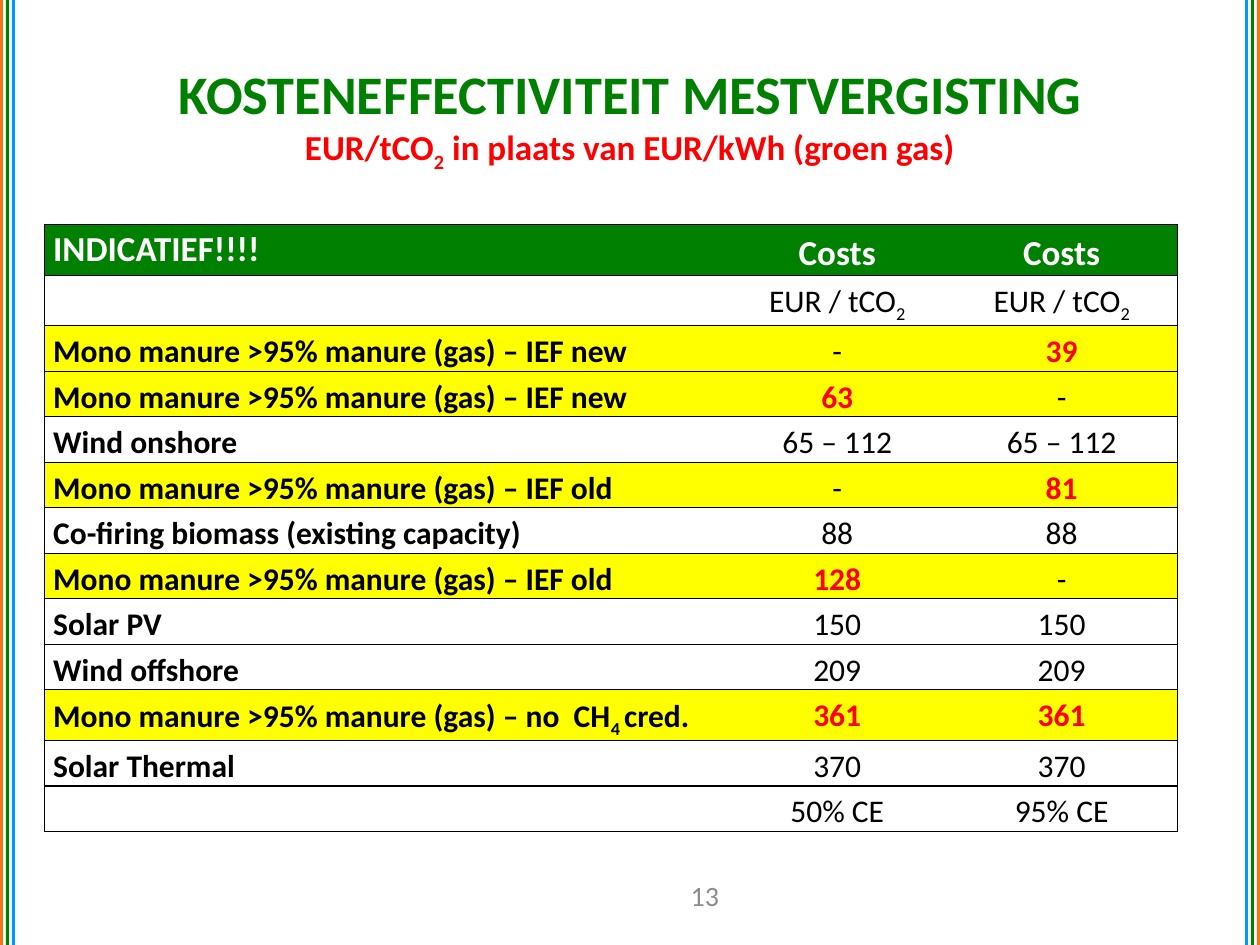
from pptx import Presentation
from pptx.dml.color import RGBColor
from pptx.enum.shapes import MSO_SHAPE
from pptx.enum.text import MSO_ANCHOR, MSO_AUTO_SIZE, PP_ALIGN
from pptx.oxml import parse_xml
from pptx.oxml.ns import nsdecls
from pptx.util import Pt

RECTANGLE = MSO_SHAPE.RECTANGLE
MIDDLE = MSO_ANCHOR.MIDDLE
CENTER, JUSTIFY = PP_ALIGN.CENTER, PP_ALIGN.JUSTIFY
LEFT = PP_ALIGN.LEFT
NO_AUTOFIT = MSO_AUTO_SIZE.NONE

ORANGE = RGBColor(0xF6, 0x76, 0x16)
GREEN = RGBColor(0x00, 0x80, 0x00)
BLUE = RGBColor(0x00, 0x99, 0xFF)
RED = RGBColor(0xFF, 0x00, 0x00)
YELLOW = RGBColor(0xFF, 0xFF, 0x00)
BLACK = RGBColor(0x00, 0x00, 0x00)
WHITE = RGBColor(0xFF, 0xFF, 0xFF)
GREY = RGBColor(0x8C, 0x8C, 0x8C)

WIDTH, HEIGHT = 720, 540
STRIPE_WIDTH = 1.7
PLAIN_TABLE_STYLE = "{2D5ABB26-0587-4C30-8999-92F81FD0307C}"
COLUMN_WIDTHS = (391, 124.5, 132)
ROW_HEIGHT, TALL_ROW_HEIGHT = 26, 29

# Text between underscores is subscript.
MANURE = "Mono manure >95% manure (gas) – "
COSTS = [
    ("INDICATIEF!!!!", "Costs", "Costs"),
    ("", "EUR / tCO_2_", "EUR / tCO_2_"),
    (MANURE + "IEF new", "-", "39"),
    (MANURE + "IEF new", "63", "-"),
    ("Wind onshore", "65 – 112", "65 – 112"),
    (MANURE + "IEF old", "-", "81"),
    ("Co-firing biomass (existing capacity)", "88", "88"),
    (MANURE + "IEF old", "128", "-"),
    ("Solar PV", "150", "150"),
    ("Wind offshore", "209", "209"),
    (MANURE + "no  CH_4 _cred.", "361", "361"),
    ("Solar Thermal", "370", "370"),
    ("", "50% CE", "95% CE"),
]


class SlideBuilder:
    font_name = "Calibri"

    def __init__(self, slide):
        self.slide = slide

    def runs(self, paragraph, text, size, color, bold=False):
        """Add text run by run, lowering the parts between underscores."""
        for index, part in enumerate(text.split("_")):
            if not part:
                continue
            run = paragraph.add_run()
            run.text = part
            run.font.name = self.font_name
            run.font.size = Pt(size)
            run.font.bold = bold
            run.font.color.rgb = color
            if index % 2:
                run._r.get_or_add_rPr().set("baseline", "-25000")

    def stripe(self, left, color):
        bar = self.slide.shapes.add_shape(
            RECTANGLE, Pt(left), 0, Pt(STRIPE_WIDTH), Pt(HEIGHT))
        bar.shadow.inherit = False
        bar.fill.solid()
        bar.fill.fore_color.rgb = color
        bar.line.fill.background()

    def title(self, heading, subtitle):
        title = self.slide.shapes.title
        title.left, title.top = Pt(36), Pt(21.6)
        title.width, title.height = Pt(648), Pt(90)
        frame = title.text_frame
        frame.auto_size = NO_AUTOFIT
        frame.vertical_anchor = MIDDLE
        paragraph = frame.paragraphs[0]
        paragraph.alignment = CENTER
        self.runs(paragraph, heading, 31, GREEN, True)
        paragraph.add_line_break()
        self.runs(paragraph, subtitle, 20, RED, True)

    def page_number(self, number):
        box = self.slide.shapes.add_textbox(Pt(371.5), Pt(497), Pt(62.6), Pt(28.8))
        frame = box.text_frame
        frame.word_wrap = True
        frame.vertical_anchor = MIDDLE
        frame.paragraphs[0].alignment = CENTER
        self.runs(frame.paragraphs[0], number, 16, GREY)

    def borders(self, cell, sides):
        properties = cell._tc.get_or_add_tcPr()
        for position, side in enumerate(sides):
            properties.insert(position, parse_xml(
                f'<a:ln{side} {nsdecls("a")} w="9525"><a:solidFill>'
                f'<a:srgbClr val="{BLACK}"/></a:solidFill></a:ln{side}>'))

    def cell(self, cell, text, size, color, bold, fill, align, spacing):
        cell.margin_left = cell.margin_right = Pt(5.2)
        cell.margin_top, cell.margin_bottom = Pt(0.7), 0
        if fill is None:
            cell.fill.background()
        else:
            cell.fill.solid()
            cell.fill.fore_color.rgb = fill
        paragraph = cell.text_frame.paragraphs[0]
        if text:
            paragraph.alignment = align
            paragraph.line_spacing = spacing
            self.runs(paragraph, text, size, color, bold)

    def cost_table(self, rows):
        heights = [TALL_ROW_HEIGHT if index == 0 or "_" in "".join(row) else ROW_HEIGHT
                   for index, row in enumerate(rows)]
        table = self.slide.shapes.add_table(
            len(rows), len(COLUMN_WIDTHS), Pt(25.2), Pt(128.2),
            Pt(sum(COLUMN_WIDTHS)), Pt(sum(heights))).table
        table.first_row = table.horz_banding = False
        table._tbl.tblPr[0].text = PLAIN_TABLE_STYLE
        for column, width in zip(table.columns, COLUMN_WIDTHS):
            column.width = Pt(width)
        for row, height in zip(table.rows, heights):
            row.height = Pt(height)

        for r, row in enumerate(rows):
            header, manure = r == 0, row[0].startswith(MANURE)
            fill = GREEN if header else YELLOW if manure else None
            for c, text in enumerate(row):
                label = c == 0
                manure_cost = manure and text.isdigit()
                color = WHITE if header else RED if manure_cost else BLACK
                align = CENTER if not label else LEFT if header else JUSTIFY
                cell = table.cell(r, c)
                self.cell(cell, text, 20 if header else 18, color,
                          header or label or manure_cost, fill, align,
                          1.07 if header and label else 1.15)
                self.borders(cell, ("LTB", "TB", "RTB")[c])


def main():
    presentation = Presentation()
    presentation.slide_width, presentation.slide_height = Pt(WIDTH), Pt(HEIGHT)
    builder = SlideBuilder(
        presentation.slides.add_slide(presentation.slide_layouts[5]))
    for index, color in enumerate((ORANGE, GREEN, BLUE)):
        inset = index * 3.4
        builder.stripe(inset, color)
        builder.stripe(WIDTH - STRIPE_WIDTH - inset, color)
    builder.page_number("13")
    builder.title("KOSTENEFFECTIVITEIT MESTVERGISTING",
                  "EUR/tCO_2_ in plaats van EUR/kWh (groen gas)")
    builder.cost_table(COSTS)
    presentation.save("out.pptx")


if __name__ == "__main__":
    main()
